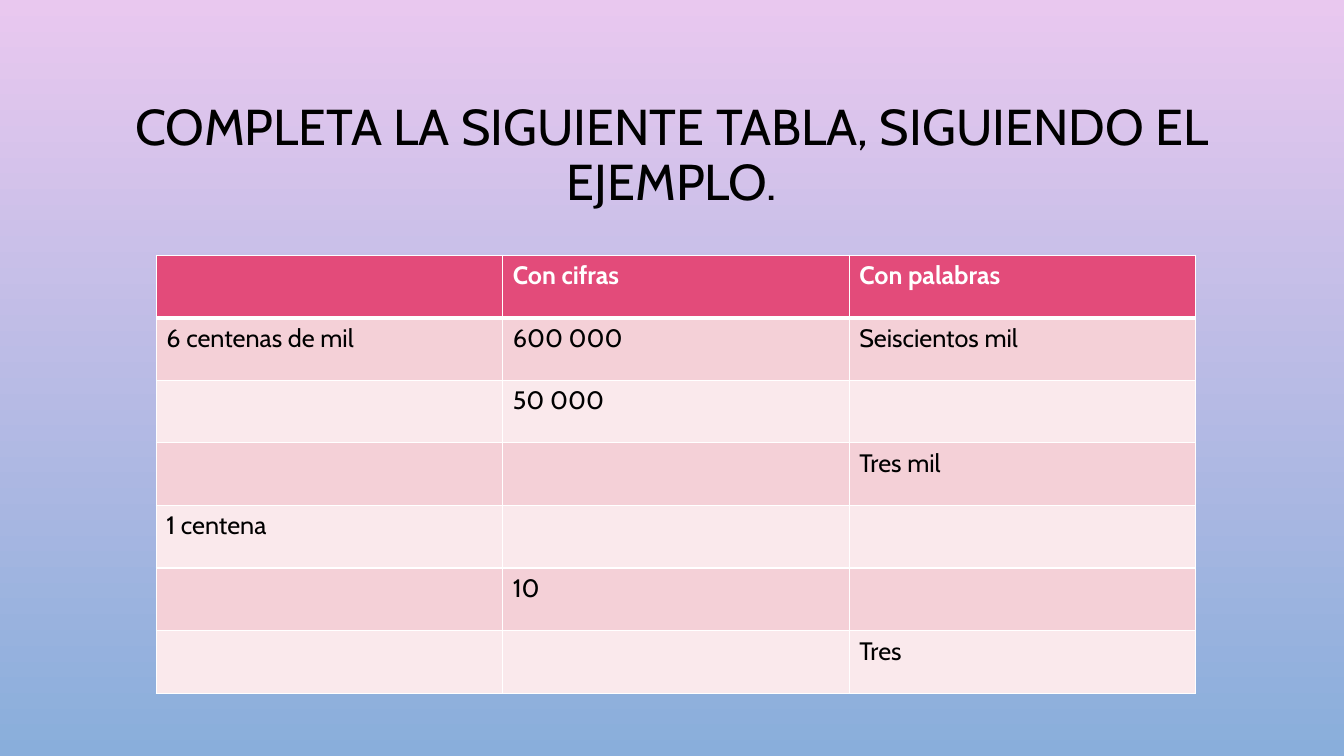
import pptx
import pptx.util
import pptx.dml.color
import pptx.enum.text
import pptx.oxml
import pptx.oxml.ns

Pt = pptx.util.Pt
HUES = {
    "sky": "E9C8EF",
    "base": "89AEDB",
    "head": "E34B7A",
    "odd": "F4D0D7",
    "even": "FAE9EC",
    "ink": "000000",
    "white": "FFFFFF",
}
ROWS = [
    ["", "Con cifras", "Con palabras"],
    ["6 centenas de mil", "600 000", "Seiscientos mil"],
    ["", "50 000", ""],
    ["", "", "Tres mil"],
    ["1 centena", "", ""],
    ["", "10", ""],
    ["", "", "Tres"],
]


class Page:
    def __init__(self, deck, face):
        self.slide = deck.slides.add_slide(deck.slide_layouts[6])
        self.face = face

    def hue(self, name):
        return pptx.dml.color.RGBColor.from_string(HUES[name])

    def fade(self, top, low):
        fill = self.slide.background.fill
        fill.gradient()
        fill.gradient_angle = 270
        for stop, name in zip(fill.gradient_stops, (top, low)):
            stop.color.rgb = self.hue(name)

    def style(self, para, size, color, bold=False):
        for run in para.runs:
            font = run.font
            font.name = self.face
            font.size = Pt(size)
            font.bold = bold
            font.color.rgb = self.hue(color)

    def title(self, text, left, top, width, height):
        box = self.slide.shapes.add_textbox(Pt(left), Pt(top), Pt(width), Pt(height))
        frame = box.text_frame
        frame.word_wrap = True
        frame.vertical_anchor = pptx.enum.text.MSO_ANCHOR.MIDDLE
        frame.text = text
        para = frame.paragraphs[0]
        para.alignment = pptx.enum.text.PP_ALIGN.CENTER
        para.line_spacing = 0.9
        self.style(para, 36, "ink")

    def edge(self, cell, side, width):
        props = cell._tc.get_or_add_tcPr()
        space = pptx.oxml.ns.nsdecls("a")
        props.append(pptx.oxml.parse_xml(
            f'<a:ln{side} {space} w="{Pt(width)}"><a:solidFill>'
            f'<a:srgbClr val="{HUES["white"]}"/></a:solidFill></a:ln{side}>'))

    def table(self, rows, left, top, width, height):
        count, span = len(rows), len(rows[0])
        grid = self.slide.shapes.add_table(
            count, span, Pt(left), Pt(top), Pt(width), Pt(height)).table
        for col in grid.columns:
            col.width = Pt(width / span)
        for y, row in enumerate(rows):
            grid.rows[y].height = Pt(height / count)
            tint = "head" if y == 0 else "odd" if y % 2 else "even"
            for x, text in enumerate(row):
                cell = grid.cell(y, x)
                for side in "LRTB":
                    thick = (y, side) in ((0, "B"), (1, "T"))
                    self.edge(cell, side, 3 if thick else 1)
                cell.fill.solid()
                cell.fill.fore_color.rgb = self.hue(tint)
                if text:
                    cell.text_frame.text = text
                    self.style(cell.text_frame.paragraphs[0], 18,
                               "ink" if y else "white", y == 0)


def main():
    deck = pptx.Presentation()
    deck.slide_width = Pt(960)
    deck.slide_height = Pt(540)
    page = Page(deck, "Cabin")
    page.fade("sky", "base")
    page.title("COMPLETA LA SIGUIENTE TABLA, SIGUIENDO EL EJEMPLO.", 72, 49, 816, 126)
    page.table(ROWS, 111.6, 182.2, 742.5, 313)
    deck.save("out.pptx")


if __name__ == "__main__":
    main()
